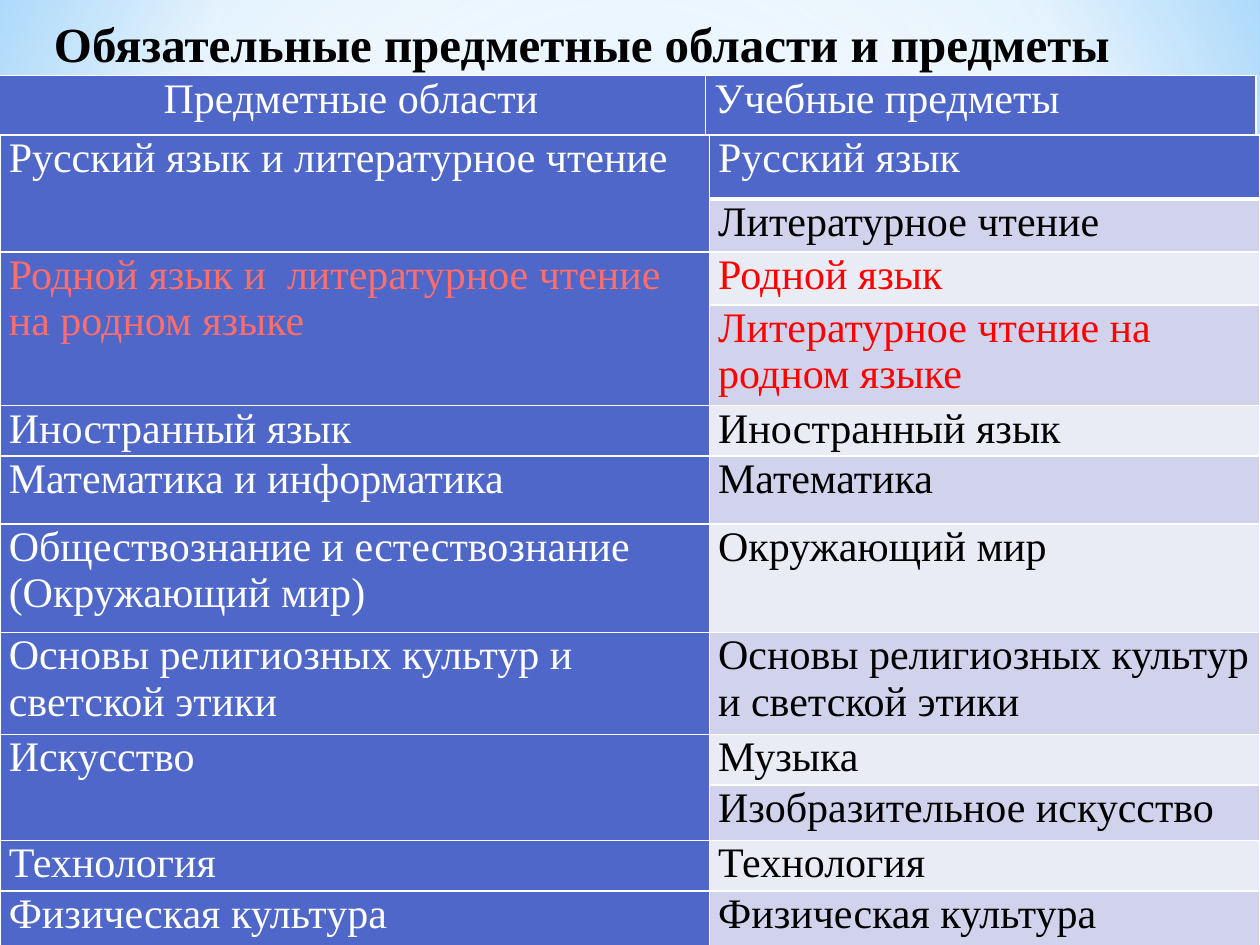
from dataclasses import dataclass

from lxml import etree
from pptx import Presentation
from pptx import util as u
from pptx.dml.color import RGBColor
from pptx.enum import shapes, text
from pptx.oxml import parse_xml
from pptx.oxml.ns import nsdecls, qn


@dataclass(frozen=True)
class Theme:
    font: str = "Times New Roman"
    title_size: int = 28
    body_size: int = 24
    ink: str = "000000"
    paper: str = "FFFFFF"
    accent: str = "4E67C8"
    bands: tuple = ("E9EBF5", "D0D3EB")
    red: str = "FF0000"
    soft_red: str = "FF6D6D"
    sky: tuple = ((0, "9ED5FF", 100), (60, "FFFFFF", 100), (100, "5BB9FF", 100))
    veil: tuple = ((0, "FFFFFF", 89), (48, "FFFFFF", 62), (100, "B4DCFA", 79))


THEME = Theme()
WIDTH, HEIGHT = 10, 7.5
COLUMNS = (5.63, 4.37)
HEADINGS = ("Предметные области", "Учебные предметы")

# Row height, subject area (None continues the area above), subject.
SUBJECTS = (
    (0.51, "Русский язык и литературное чтение", "Русский язык"),
    (0.42, None, "Литературное чтение"),
    (0.42, "Родной язык и  литературное чтение на родном языке", "Родной язык"),
    (0.74, None, "Литературное чтение на родном языке"),
    (0.40, "Иностранный язык", "Иностранный язык"),
    (0.54, "Математика и информатика", "Математика"),
    (0.86, "Обществознание и естествознание\n(Окружающий мир)", "Окружающий мир"),
    (0.81, "Основы религиозных культур и светской этики",
     "Основы религиозных культур и светской этики"),
    (0.40, "Искусство", "Музыка"),
    (0.44, None, "Изобразительное искусство"),
    (0.40, "Технология", "Технология"),
    (0.54, "Физическая культура", "Физическая культура"),
)
NATIVE_LANGUAGE_ROWS = (2, 3)


def radial_gradient(stops, focus):
    """Return a gradFill spreading from focus (left, top, right, bottom in %)."""
    marks = "".join(
        f'<a:gs pos="{place * 1000}"><a:srgbClr val="{color}">'
        f'<a:alpha val="{opacity * 1000}"/></a:srgbClr></a:gs>'
        for place, color, opacity in stops)
    sides = " ".join(f'{side}="{share * 1000}"' for side, share in zip("ltrb", focus))
    return parse_xml(
        f'<a:gradFill {nsdecls("a")} rotWithShape="1"><a:gsLst>{marks}</a:gsLst>'
        f'<a:path path="circle"><a:fillToRect {sides}/></a:path></a:gradFill>')


def apply_gradient(fill, holder, gradient):
    fill.gradient()
    old = next(holder.iter(qn("a:gradFill")))
    old.getparent().replace(old, gradient)


def style_text(frame, size, color, bold=False, align=text.PP_ALIGN.LEFT):
    for para in frame.paragraphs:
        para.alignment = align
        for span in para.runs:
            span.font.name = THEME.font
            span.font.size = u.Pt(size)
            span.font.bold = bold
            span.font.color.rgb = RGBColor.from_string(color)


def add_backdrop(page, box):
    apply_gradient(page.background.fill, page.background._cSld,
                   radial_gradient(THEME.sky, (20, 10, 20, 60)))
    veil = page.shapes.add_shape(shapes.MSO_SHAPE.RECTANGLE, *map(u.Inches, box))
    veil.shadow.inherit = False
    veil.line.fill.background()
    apply_gradient(veil.fill, veil.element.spPr,
                   radial_gradient(THEME.veil, (50, 50, 50, 50)))


def add_title(page, box):
    frame = page.shapes.add_textbox(*map(u.Inches, box)).text_frame
    frame.word_wrap = True
    frame.vertical_anchor = text.MSO_ANCHOR.MIDDLE
    frame.text = "Обязательные предметные области и предметы"
    style_text(frame, THEME.title_size, THEME.ink, bold=True)


def add_grid(page, left, top, row_heights):
    table = page.shapes.add_table(
        len(row_heights), len(COLUMNS), u.Inches(left), u.Inches(top),
        u.Inches(sum(COLUMNS)), u.Inches(sum(row_heights))).table
    table.first_row = table.horz_banding = False
    for column, width in zip(table.columns, COLUMNS):
        column.width = u.Inches(width)
    for row, height in zip(table.rows, row_heights):
        row.height = u.Inches(height)
    return table


def add_borders(cell, bottom):
    properties = cell._tc.get_or_add_tcPr()
    for index, (side, points) in enumerate(zip("LRTB", (1, 1, 1, bottom))):
        properties.insert(index, parse_xml(
            f'<a:ln{side} {nsdecls("a")} w="{u.Pt(points)}"><a:solidFill>'
            f'<a:srgbClr val="{THEME.paper}"/></a:solidFill></a:ln{side}>'))


def fill_cell(cell, words, fill, color, bottom=1, align=text.PP_ALIGN.LEFT):
    cell.margin_left = cell.margin_right = u.Inches(0.07)
    cell.margin_top = cell.margin_bottom = 0
    cell.fill.solid()
    cell.fill.fore_color.rgb = RGBColor.from_string(fill)
    add_borders(cell, bottom)
    cell.text_frame.text = words
    style_text(cell.text_frame, THEME.body_size, color, align=align)


def add_heading_table(page, left, top):
    table = add_grid(page, left, top, [0.52])
    aligns = (text.PP_ALIGN.CENTER, text.PP_ALIGN.LEFT)
    for column, (words, align) in enumerate(zip(HEADINGS, aligns)):
        fill_cell(table.cell(0, column), words, THEME.accent, THEME.paper, 3, align)


def add_subject_table(page, left, top):
    table = add_grid(page, left, top, [height for height, _, _ in SUBJECTS])
    for row, (_, area, subject) in enumerate(SUBJECTS):
        native = row in NATIVE_LANGUAGE_ROWS
        first = row == 0
        fill_cell(table.cell(row, 0), area or "", THEME.accent,
                  THEME.soft_red if native else THEME.paper)
        subject_color = THEME.paper if first else THEME.red if native else THEME.ink
        fill_cell(table.cell(row, 1), subject,
                  THEME.accent if first else THEME.bands[row % 2],
                  subject_color, 3 if first else 1)
        if area is None:
            table.cell(row - 1, 0).merge(table.cell(row, 0))


def main():
    deck = Presentation()
    deck.slide_width, deck.slide_height = u.Inches(WIDTH), u.Inches(HEIGHT)
    page = deck.slides.add_slide(deck.slide_layouts[6])
    add_backdrop(page, (0, 0, WIDTH, 5.58))
    add_title(page, (0.33, 0, 9.65, 0.68))
    add_heading_table(page, -0.03, 0.6)
    add_subject_table(page, 0, 1.07)
    deck.save("out.pptx")


if __name__ == "__main__":
    main()
